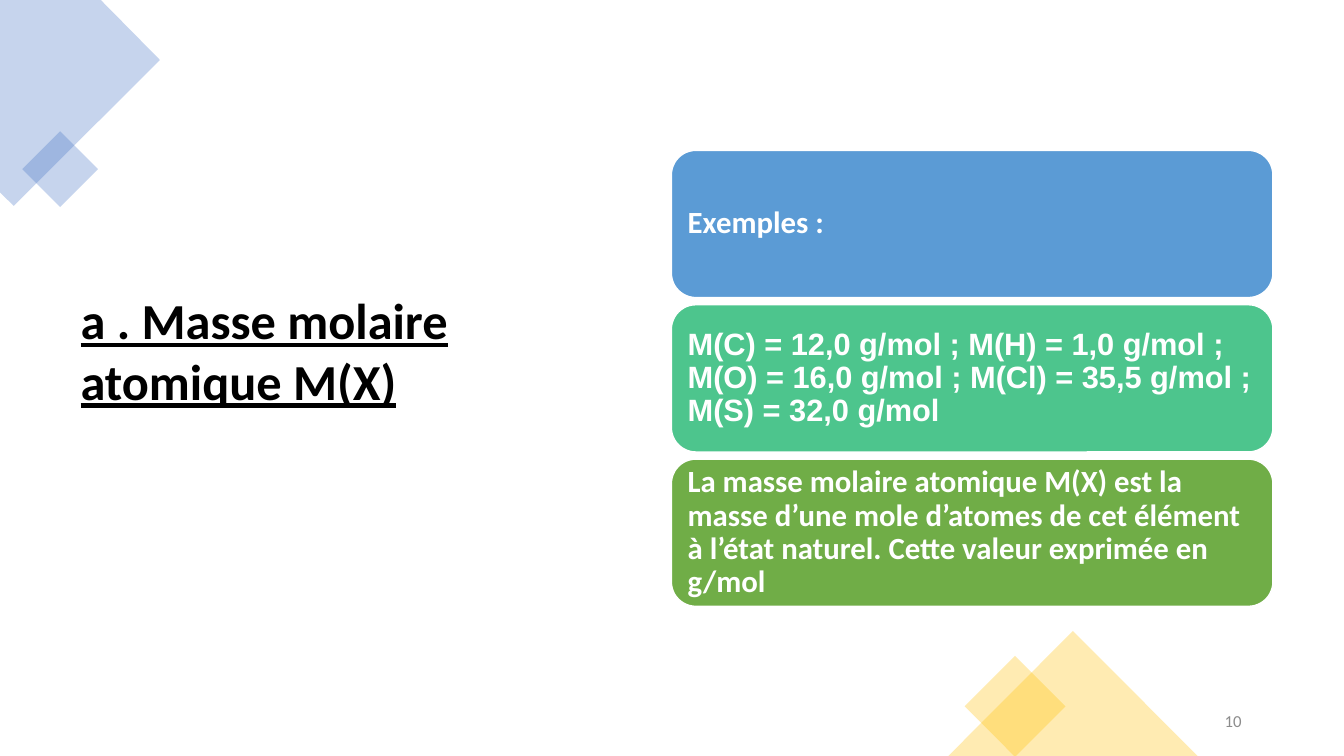
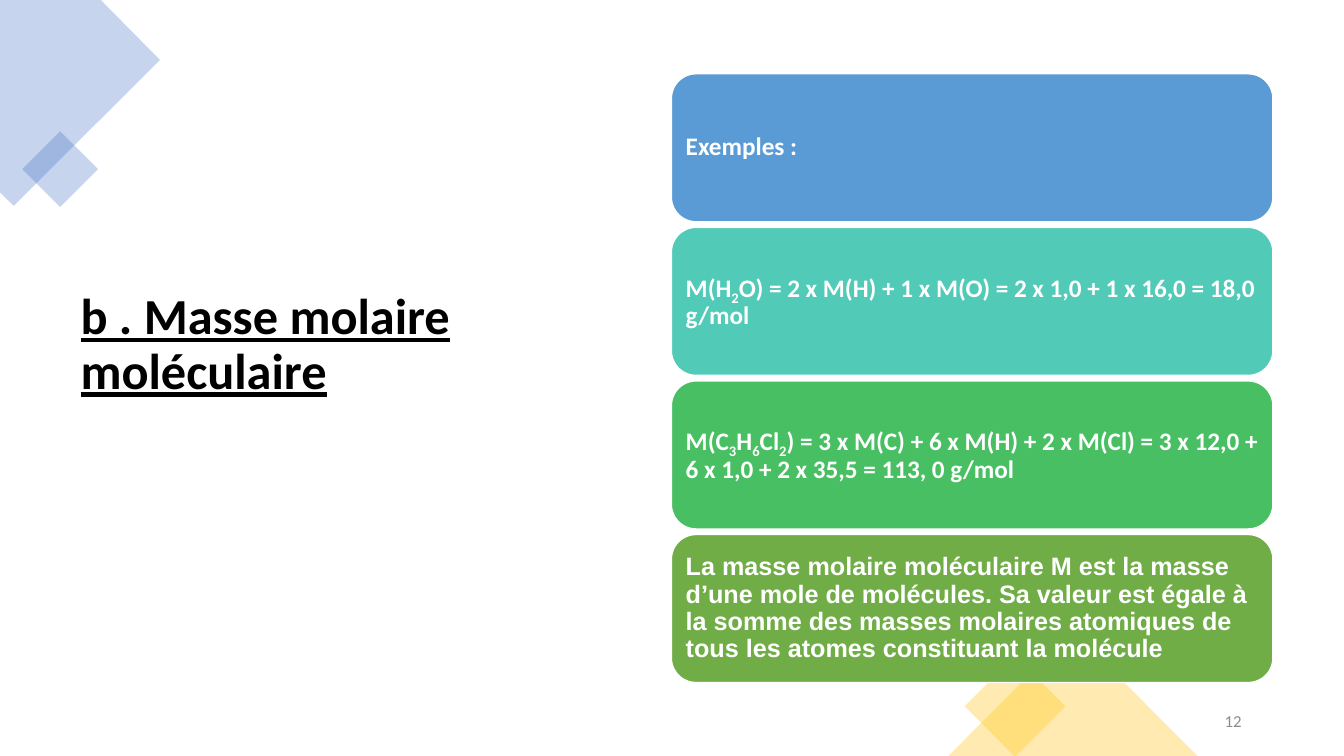
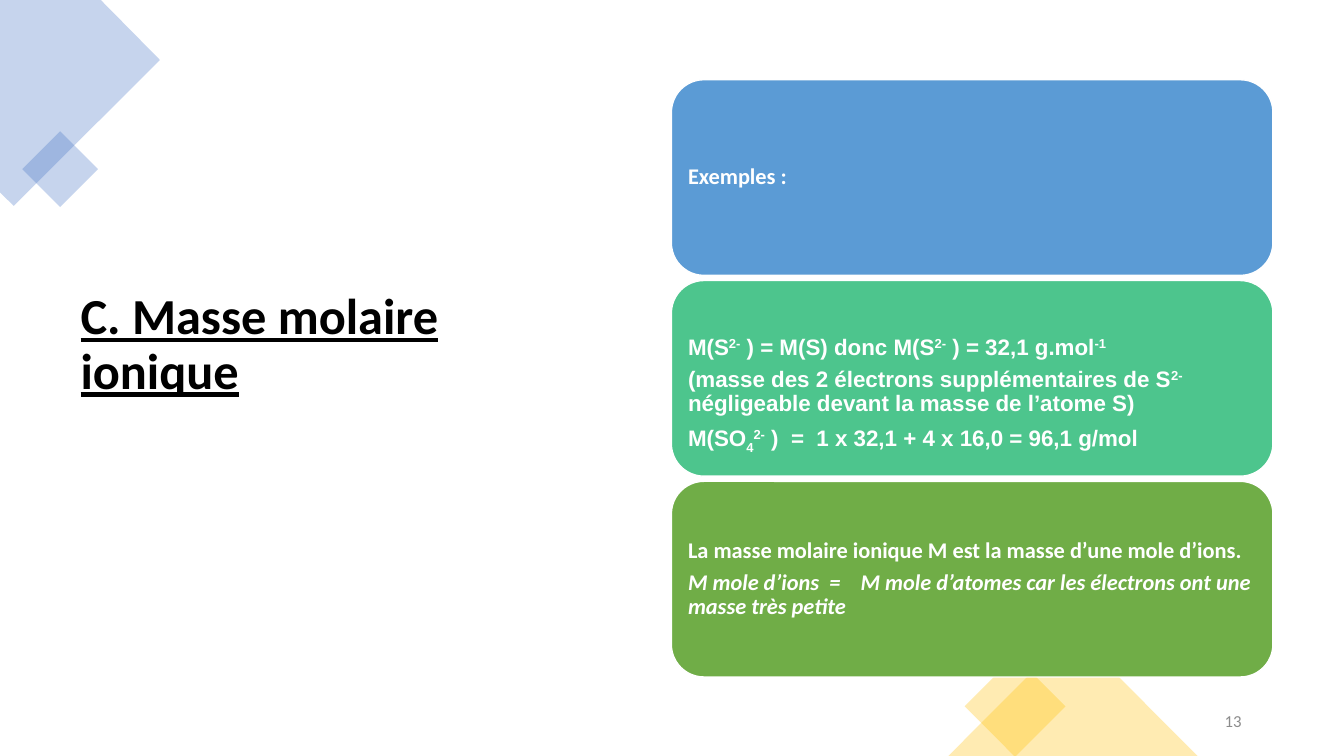
from lxml.etree import SubElement
from pptx import Presentation
from pptx.dml.color import RGBColor
from pptx.enum.shapes import MSO_SHAPE
from pptx.enum.text import MSO_ANCHOR, MSO_AUTO_SIZE, PP_ALIGN
from pptx.oxml.ns import qn
from pptx.util import Cm, Pt

WHITE = RGBColor(0xFF, 0xFF, 0xFF)
BLACK = RGBColor(0, 0, 0)
GREY = RGBColor(0x8C, 0x8C, 0x8C)
NAVY = RGBColor(0x44, 0x72, 0xC4)
GOLD = RGBColor(0xFF, 0xC0, 0x00)
BLUE = RGBColor(0x5B, 0x9B, 0xD5)
AQUA = RGBColor(0x52, 0xCA, 0xB8)
MINT = RGBColor(0x4D, 0xC5, 0x8D)
GREEN = RGBColor(0x49, 0xBF, 0x64)
LEAF = RGBColor(0x70, 0xAD, 0x47)

SANS, ARIAL = "Calibri", "Arial"
SUB, SUP = -25, 30
CARD_X, CARD_W = 16.92, 15.16


def add_run(para, text, size, color, font=SANS, bold=False, italic=False, base=0):
    run = para.add_run()
    run.text = text
    face = run.font
    face.name, face.size, face.bold, face.italic = font, Pt(size), bold, italic
    face.color.rgb = color
    if base:
        run._r.get_or_add_rPr().set("baseline", str(base * 1000))
    return run


def set_frame(frame, inset):
    frame.word_wrap = True
    frame.auto_size = MSO_AUTO_SIZE.NONE
    frame.vertical_anchor = MSO_ANCHOR.MIDDLE
    frame.margin_left = frame.margin_right = Cm(inset)
    frame.margin_top = frame.margin_bottom = Cm(inset)


def add_title(slide, text, pitch, lift):
    """Place the title; lift is the bottom inset that raises the text."""
    title = slide.shapes.title
    title.left, title.top = Cm(1.78), Cm(1.78)
    title.width, title.height = Cm(13.34), Cm(15.47)
    frame = title.text_frame
    set_frame(frame, 0.25)
    frame.margin_top, frame.margin_bottom = Cm(0.13), Cm(lift)
    para = frame.paragraphs[0]
    para.alignment = PP_ALIGN.LEFT
    para.line_spacing = pitch
    add_run(para, text, 36, BLACK, bold=True).font.underline = True


def tint(shape, color):
    """Give a borderless fill at 30 % opacity."""
    shape.shadow.inherit = False
    shape.line.fill.background()
    shape.fill.solid()
    shape.fill.fore_color.rgb = color
    tone = shape._element.spPr.find(".//" + qn("a:srgbClr"))
    SubElement(tone, qn("a:alpha")).set("val", "30000")


def add_decor(slide):
    shapes = slide.shapes
    pen = shapes.build_freeform(0, 0)
    edge = [(2.54, 0), (4.03, 1.51), (0.35, 5.19), (0, 4.85)]
    pen.add_line_segments([(Cm(x), Cm(y)) for x, y in edge])
    tint(pen.convert_to_shape(), NAVY)
    for kind, left, top, width, height, turn, color in (
        (MSO_SHAPE.RECTANGLE, 0.84, 3.59, 1.35, 1.35, 45, NAVY),
        (MSO_SHAPE.RECTANGLE, 24.68, 16.9, 1.8, 1.8, 45, GOLD),
        (MSO_SHAPE.ISOSCELES_TRIANGLE, 23.9, 15.9, 6.28, 3.15, 0, GOLD),
    ):
        shape = shapes.add_shape(kind, Cm(left), Cm(top), Cm(width), Cm(height))
        shape.rotation = turn
        tint(shape, color)


def add_card(slide, top, height, inset, size, card):
    shape = slide.shapes.add_shape(
        MSO_SHAPE.ROUNDED_RECTANGLE, Cm(CARD_X), Cm(top), Cm(CARD_W), Cm(height))
    shape.shadow.inherit = False
    shape.fill.solid()
    shape.fill.fore_color.rgb = card["fill"]
    shape.line.color.rgb = WHITE
    shape.line.width = Pt(1)
    frame = shape.text_frame
    set_frame(frame, inset)
    frame.margin_top = Cm(inset + card.get("drop", 0))
    for i, parts in enumerate(card["text"]):
        para = frame.add_paragraph() if i else frame.paragraphs[0]
        para.alignment = PP_ALIGN.LEFT
        para.line_spacing = 0.9
        para.space_after = Pt(round(size * 0.35, 1))
        for part in parts:
            text, base = (part, 0) if isinstance(part, str) else part
            add_run(para, text, size, WHITE, card.get("font", SANS), True,
                    i in card.get("slant", ()), base)


def add_number(slide, number):
    box = slide.shapes.add_textbox(Cm(23.92), Cm(17.65), Cm(7.62), Cm(1.02))
    set_frame(box.text_frame, 0.25)
    para = box.text_frame.paragraphs[0]
    para.alignment = PP_ALIGN.RIGHT
    add_run(para, number, 12, GREY)


HEAD = {"fill": BLUE, "text": [["Exemples :"]]}

PAGES = [
    {
        "number": "10", "title": "a . Masse molaire atomique M(X)",
        "pitch": 1.0, "lift": 1.52,
        "top": 3.79, "height": 3.71, "step": 3.89, "inset": 0.23, "size": 22,
        "cards": [
            HEAD,
            {"fill": MINT, "font": ARIAL, "text": [[
                "M(C) = 12,0 g/mol ; M(H) = 1,0 g/mol ; M(O) = 16,0 g/mol ; "
                "M(Cl) = 35,5 g/mol ; M(S) = 32,0 g/mol"]]},
            {"fill": LEAF, "text": [[
                "La masse molaire atomique M(X) est la masse d’une mole d’atomes "
                "de cet élément à l’état naturel. Cette valeur exprimée en g/mol"]]},
        ],
    },
    {
        "number": "12", "title": "b . Masse molaire moléculaire",
        "pitch": 0.9, "lift": 1.73,
        "top": 1.86, "height": 3.73, "step": 3.87, "inset": 0.18, "size": 18,
        "cards": [
            HEAD,
            {"fill": AQUA, "text": [[
                "M(H", ("2", SUB),
                "O) = 2 x M(H) + 1 x M(O) = 2 x 1,0 + 1 x 16,0 = 18,0 g/mol"]]},
            {"fill": GREEN, "text": [[
                "M(C", ("3", SUB), "H", ("6", SUB), "Cl", ("2", SUB),
                ") = 3 x M(C) + 6 x M(H) + 2 x M(Cl) = 3 x 12,0 + 6 x 1,0 "
                "+ 2 x 35,5 = 113, 0 g/mol"]]},
            {"fill": LEAF, "font": ARIAL, "text": [[
                "La masse molaire moléculaire M est la masse d’une mole de "
                "molécules. Sa valeur est égale à la somme des masses molaires "
                "atomiques de tous les atomes constituant la molécule"]]},
        ],
    },
    {
        "number": "13", "title": "C. Masse molaire ionique",
        "pitch": 0.9, "lift": 1.73,
        "top": 2.01, "height": 4.93, "step": 5.06, "inset": 0.18, "size": 16,
        "cards": [
            HEAD,
            {"fill": MINT, "font": ARIAL, "drop": 0.8, "text": [
                ["M(S", ("2-", SUP), " ) = M(S) donc M(S", ("2-", SUP),
                 " ) = 32,1 g.mol", ("-1", SUP)],
                ["(masse des 2 électrons supplémentaires de S", ("2-", SUP),
                 " négligeable devant la masse de l’atome S)"],
                ["M(SO", ("4", SUB), ("2-", SUP),
                 " )  =  1 x 32,1 + 4 x 16,0 = 96,1 g/mol"]]},
            {"fill": LEAF, "slant": (1,), "text": [
                ["La masse molaire ionique M est la masse d’une mole d’ions."],
                ["M mole d’ions  =    M mole d’atomes car les électrons ont une "
                 "masse très petite"]]},
        ],
    },
]


def main():
    deck = Presentation()
    deck.slide_width, deck.slide_height = Cm(33.87), Cm(19.05)
    for page in PAGES:
        slide = deck.slides.add_slide(deck.slide_layouts[5])
        add_title(slide, page["title"], page["pitch"], page["lift"])
        add_decor(slide)
        for i, card in enumerate(page["cards"]):
            add_card(slide, page["top"] + i * page["step"], page["height"],
                     page["inset"], page["size"], card)
        add_number(slide, page["number"])
    deck.save("out.pptx")


if __name__ == "__main__":
    main()
